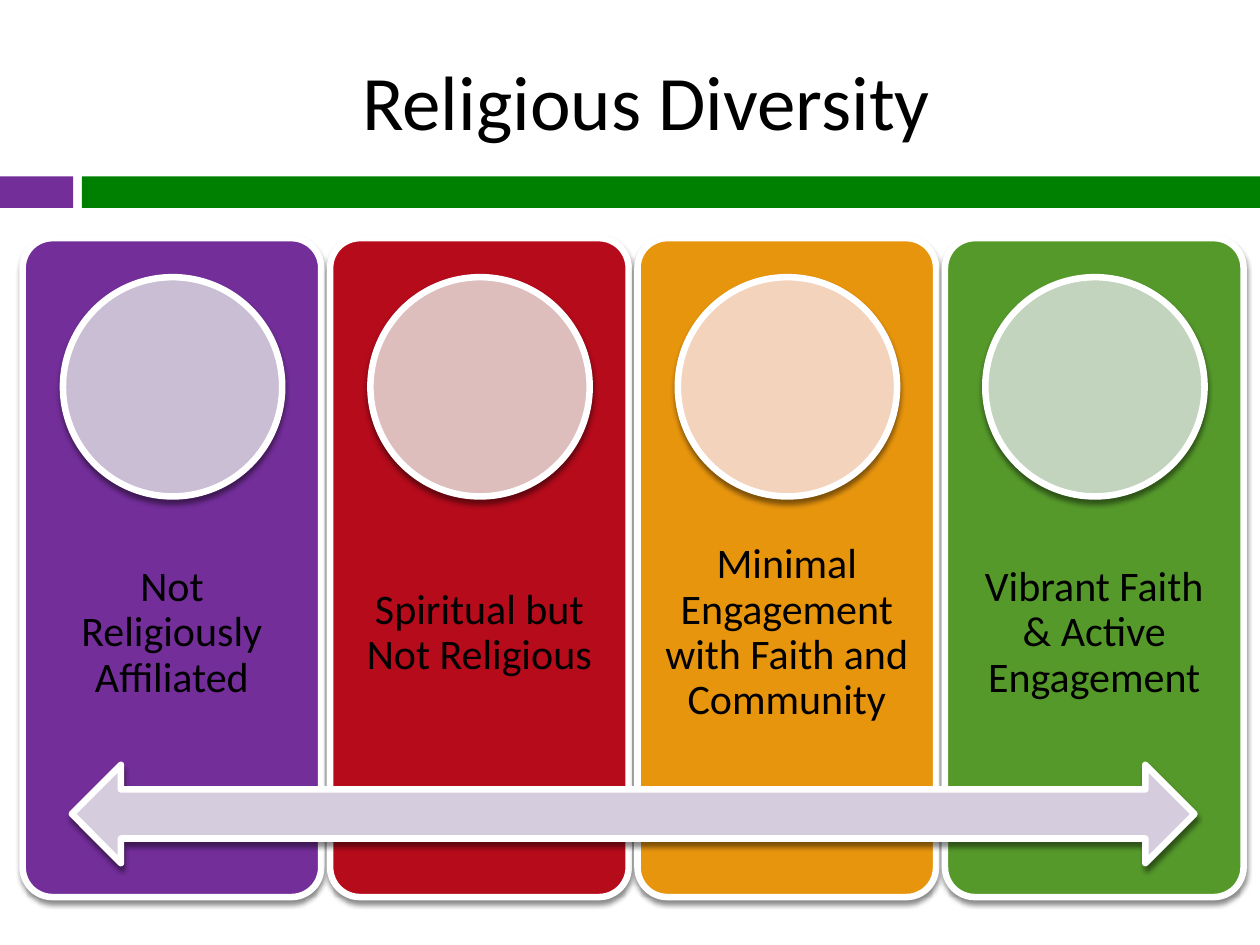
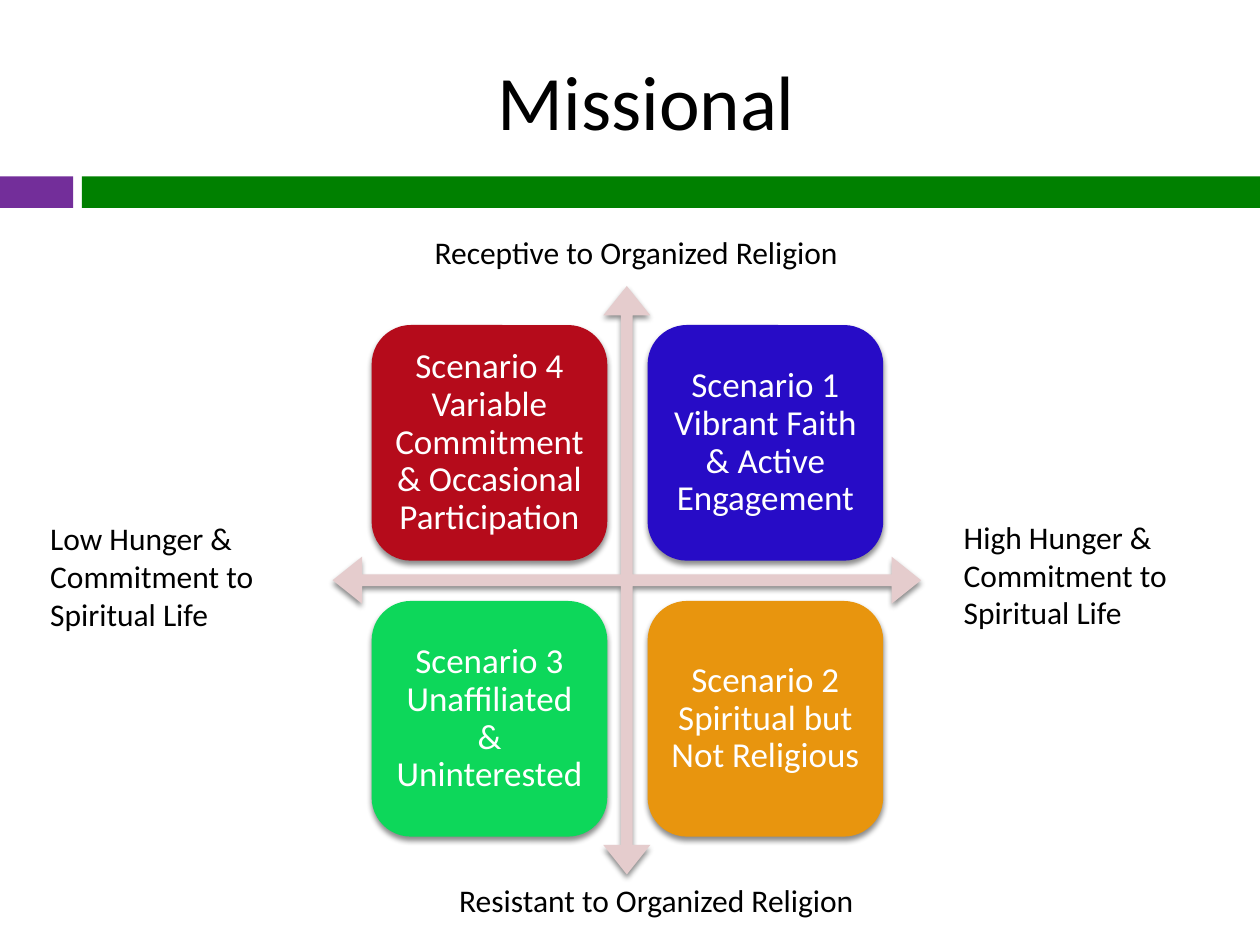
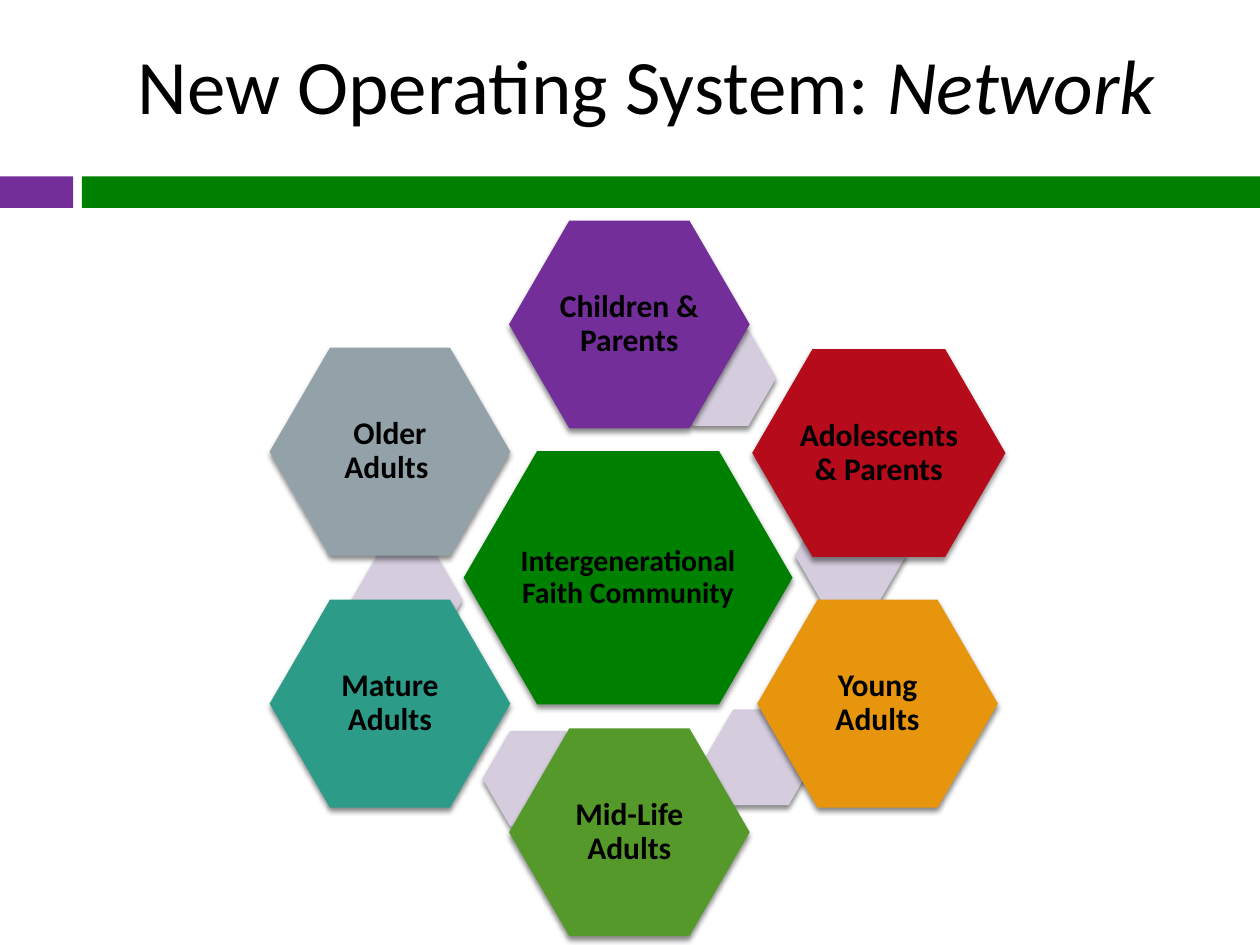
from dataclasses import dataclass
from typing import NamedTuple, Optional

import lxml.etree
import pptx
import pptx.dml.color
import pptx.enum.shapes
import pptx.enum.text
import pptx.oxml.ns
import pptx.presentation
import pptx.shapes.autoshape
import pptx.slide
import pptx.text.text
import pptx.util

RGB = pptx.dml.color.RGBColor
FORM = pptx.enum.shapes.MSO_SHAPE
ALIGN = pptx.enum.text.PP_ALIGN
ANCHOR = pptx.enum.text.MSO_ANCHOR

EMU_PER_PX = 9144
FONT = "Calibri"

BLACK = RGB(0x00, 0x00, 0x00)
WHITE = RGB(0xFF, 0xFF, 0xFF)
PURPLE = RGB(0x73, 0x2E, 0x9A)
GREEN = RGB(0x00, 0x80, 0x00)
RED = RGB(0xB5, 0x0B, 0x1B)
ORANGE = RGB(0xE8, 0x95, 0x0E)
LEAF = RGB(0x55, 0x99, 0x2B)
BLUE = RGB(0x27, 0x0C, 0xC6)
MINT = RGB(0x0D, 0xD7, 0x5A)
TEAL = RGB(0x2C, 0x9C, 0x89)
GREY = RGB(0x93, 0xA2, 0xA8)
LILAC = RGB(0xD5, 0xCD, 0xDE)
ROSE = RGB(0xE5, 0xCC, 0xCD)
PALE_PURPLE = RGB(0xC9, 0xBE, 0xD4)
PALE_RED = RGB(0xDE, 0xBD, 0xBD)
PALE_ORANGE = RGB(0xF4, 0xD3, 0xBD)
PALE_LEAF = RGB(0xC3, 0xD4, 0xBE)


class Box(NamedTuple):
    left: int
    top: int
    width: int
    height: int


class Insets(NamedTuple):
    left: int
    top: int
    right: int
    bottom: int


class Words(NamedTuple):
    text: str
    italic: bool = False


@dataclass(frozen=True)
class TextStyle:
    size: int
    color: RGB = BLACK
    bold: bool = False
    align: ALIGN = ALIGN.CENTER
    anchor: ANCHOR = ANCHOR.MIDDLE
    spacing: Optional[float] = 0.9
    insets: Insets = Insets(10, 5, 10, 5)


class Belief(NamedTuple):
    text: str
    color: RGB
    pale: RGB


class Scenario(NamedTuple):
    text: str
    color: RGB
    column: int
    row: int


class AxisLabel(NamedTuple):
    text: str
    box: Box
    align: ALIGN


class Generation(NamedTuple):
    text: str
    color: RGB
    box: Box
    accent: Optional[tuple[int, int]]


TITLE = TextStyle(44, spacing=None)
BELIEF = TextStyle(24, insets=Insets(12, 221, 12, 117))
SCENARIO = TextStyle(20, WHITE, insets=Insets(8, 8, 8, 8))
GENERATION = TextStyle(18, bold=True, insets=Insets(3, 3, 3, 3))
COMMUNITY = TextStyle(17, bold=True, insets=Insets(2, 2, 2, 2))

TITLE_BOX = Box(67, 25, 892, 108)
HIGH_TITLE_BOX = Box(67, 0, 892, 133)

BELIEFS = (
    Belief("Not Religiously Affiliated", PURPLE, PALE_PURPLE),
    Belief("Spiritual but Not Religious", RED, PALE_RED),
    Belief("Minimal Engagement with Faith and Community", ORANGE, PALE_ORANGE),
    Belief("Vibrant Faith\n& Active Engagement", LEAF, PALE_LEAF),
)
SCENARIOS = (
    Scenario("Scenario 4 Variable Commitment & Occasional Participation", RED, 0, 0),
    Scenario("Scenario 1 Vibrant Faith & Active Engagement", BLUE, 1, 0),
    Scenario("Scenario 3 Unaffiliated & Uninterested ", MINT, 0, 1),
    Scenario("Scenario 2 Spiritual but Not Religious", ORANGE, 1, 1),
)
AXIS_LABELS = (
    AxisLabel("Receptive to Organized Religion", Box(47, 180, 916, 40), ALIGN.CENTER),
    AxisLabel("Resistant to Organized Religion", Box(63, 694, 916, 40), ALIGN.CENTER),
    AxisLabel("Low Hunger & Commitment to Spiritual Life", Box(30, 407, 208, 101), ALIGN.LEFT),
    AxisLabel("High Hunger & Commitment to Spiritual Life", Box(755, 406, 208, 101), ALIGN.LEFT),
)
GENERATIONS = (
    Generation("Children & Parents", PURPLE, Box(404, 175, 191, 165), (528, 262)),
    Generation("Adolescents & Parents", RED, Box(597, 277, 201, 165), (631, 403)),
    Generation("Young Adults", ORANGE, Box(601, 476, 191, 165), (560, 563)),
    Generation("Mid-Life Adults", LEAF, Box(404, 578, 191, 165), (383, 580)),
    Generation("Mature Adults", TEAL, Box(214, 476, 191, 165), (279, 438)),
    Generation("Older Adults ", GREY, Box(214, 276, 191, 165), None),
)


def px(length: int) -> pptx.util.Emu:
    return pptx.util.Emu(length * EMU_PER_PX)


def place(box: Box) -> list[pptx.util.Emu]:
    return [px(length) for length in box]


def write(frame: pptx.text.text.TextFrame, words: list[Words], style: TextStyle) -> None:
    frame.word_wrap = True
    frame.vertical_anchor = style.anchor
    frame.margin_left, frame.margin_top, frame.margin_right, frame.margin_bottom = map(
        px, style.insets
    )
    paragraph = frame.paragraphs[0]
    paragraph.alignment = style.align
    if style.spacing:
        paragraph.line_spacing = style.spacing
    for part in words:
        for index, line in enumerate(part.text.split("\n")):
            if index:
                paragraph.add_line_break()
            run = paragraph.add_run()
            run.text = line
            run.font.name = FONT
            run.font.size = pptx.util.Pt(style.size)
            run.font.bold = style.bold
            run.font.italic = part.italic
            run.font.color.rgb = style.color


def add_text(slide: pptx.slide.Slide, box: Box, words: list[Words], style: TextStyle) -> None:
    write(slide.shapes.add_textbox(*place(box)).text_frame, words, style)


def cast_shadow(shape: pptx.shapes.autoshape.Shape) -> None:
    qn = pptx.oxml.ns.qn
    effects = shape._element.spPr.find(qn("a:effectLst"))
    shadow = lxml.etree.SubElement(
        effects, qn("a:outerShdw"),
        blurRad="38100", dist="30000", dir="5400000", rotWithShape="0",
    )
    tint = lxml.etree.SubElement(shadow, qn("a:srgbClr"), val="000000")
    lxml.etree.SubElement(tint, qn("a:alpha"), val="45000")


def add_form(
    slide: pptx.slide.Slide,
    form: FORM,
    box: Box,
    color: RGB,
    adjustments: tuple[float, ...] = (),
    outlined: bool = False,
    shadowed: bool = True,
) -> pptx.shapes.autoshape.Shape:
    shape = slide.shapes.add_shape(form, *place(box))
    shape.shadow.inherit = False
    shape.fill.solid()
    shape.fill.fore_color.rgb = color
    if outlined:
        shape.line.color.rgb = WHITE
        shape.line.width = pptx.util.Pt(3.75)
    else:
        shape.line.fill.background()
    for index, value in enumerate(adjustments):
        shape.adjustments[index] = value
    if shadowed:
        cast_shadow(shape)
    return shape


def add_hexagon(slide: pptx.slide.Slide, box: Box, color: RGB) -> pptx.shapes.autoshape.Shape:
    return add_form(slide, FORM.HEXAGON, box, color, (0.29,))


def start_slide(
    deck: pptx.presentation.Presentation, title: list[Words], title_box: Box = TITLE_BOX
) -> pptx.slide.Slide:
    slide = deck.slides.add_slide(deck.slide_layouts[6])
    add_form(slide, FORM.RECTANGLE, Box(0, 140, 58, 25), PURPLE, shadowed=False)
    add_form(slide, FORM.RECTANGLE, Box(65, 140, 935, 25), GREEN, shadowed=False)
    add_text(slide, title_box, title, TITLE)
    return slide


def add_diversity(deck: pptx.presentation.Presentation) -> None:
    slide = start_slide(deck, [Words("Religious Diversity")])
    for index, belief in enumerate(BELIEFS):
        left = 18 + 244 * index
        column = add_form(
            slide, FORM.ROUNDED_RECTANGLE, Box(left, 189, 237, 523), belief.color, (0.1,), True
        )
        write(column.text_frame, [Words(belief.text)], BELIEF)
        add_form(slide, FORM.OVAL, Box(left + 32, 220, 174, 174), belief.pale, outlined=True)
    add_form(slide, FORM.LEFT_RIGHT_ARROW, Box(57, 607, 891, 78), LILAC, outlined=True)


def add_missional(deck: pptx.presentation.Presentation) -> None:
    slide = start_slide(deck, [Words("Missional")])
    add_form(slide, FORM.QUAD_ARROW, Box(264, 227, 467, 467), ROSE, (0.02, 0.04, 0.05))
    for scenario in SCENARIOS:
        box = Box(295 + 219 * scenario.column, 258 + 219 * scenario.row, 187, 187)
        quadrant = add_form(slide, FORM.ROUNDED_RECTANGLE, box, scenario.color)
        write(quadrant.text_frame, [Words(scenario.text)], SCENARIO)
    for label in AXIS_LABELS:
        style = TextStyle(18, align=label.align, anchor=ANCHOR.TOP, spacing=None)
        add_text(slide, label.box, [Words(label.text)], style)


def add_network(deck: pptx.presentation.Presentation) -> None:
    title = [Words("New Operating System: "), Words("Network", italic=True)]
    slide = start_slide(deck, title, HIGH_TITLE_BOX)
    community = add_hexagon(slide, Box(368, 358, 261, 201), GREEN)
    write(community.text_frame, [Words("Intergenerational\nFaith Community")], COMMUNITY)
    for generation in GENERATIONS:
        if generation.accent:
            add_hexagon(slide, Box(*generation.accent, 88, 76), LILAC)
        member = add_hexagon(slide, generation.box, generation.color)
        write(member.text_frame, [Words(generation.text)], GENERATION)


def main() -> None:
    deck = pptx.Presentation()
    deck.slide_width = px(1000)
    deck.slide_height = px(750)
    add_diversity(deck)
    add_missional(deck)
    add_network(deck)
    deck.save("out.pptx")


if __name__ == "__main__":
    main()
